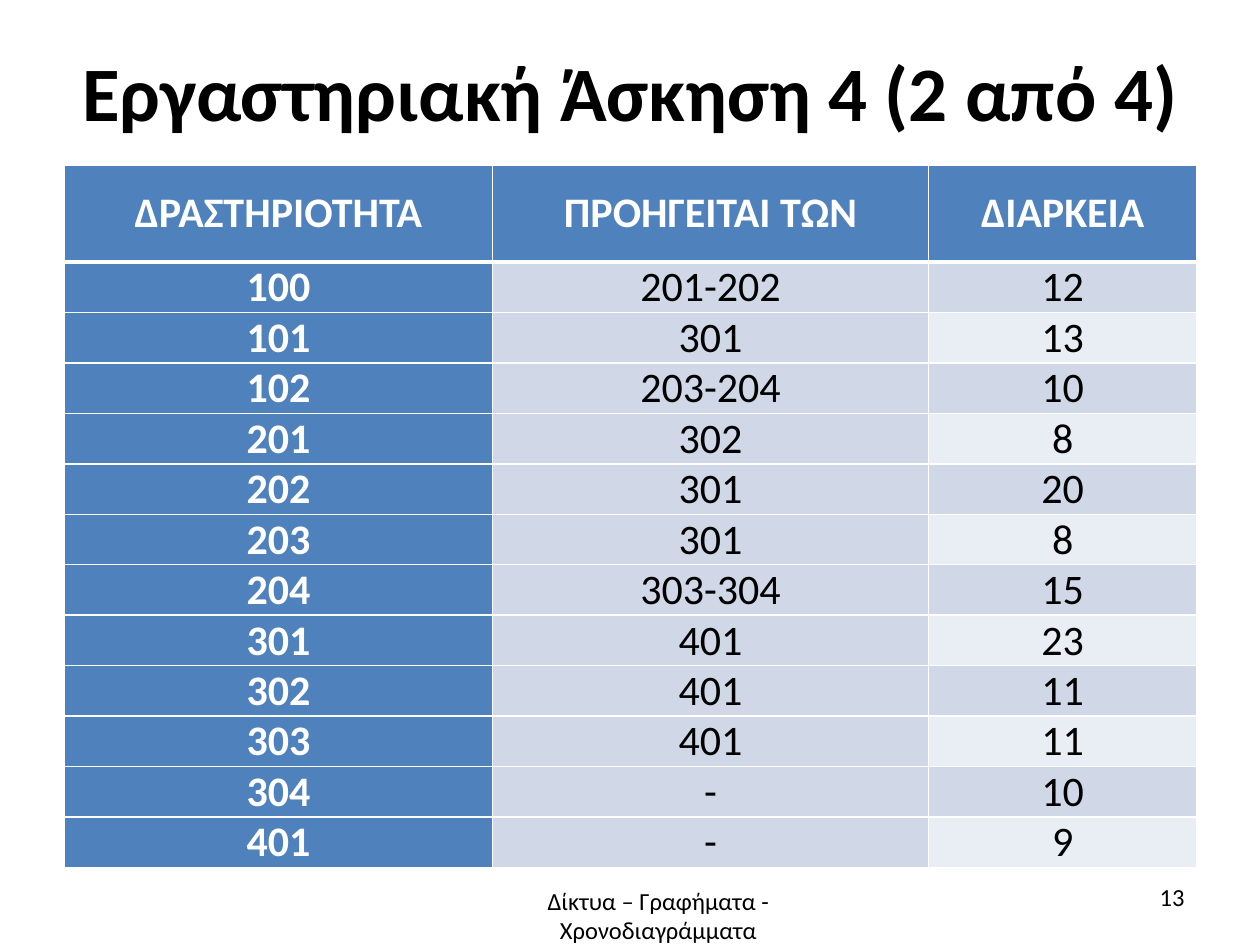
from lxml.etree import SubElement
from pptx import Presentation
from pptx.dml.color import RGBColor
from pptx.enum.text import MSO_ANCHOR, PP_ALIGN
from pptx.oxml.ns import qn
from pptx.util import Inches, Pt

BLACK = RGBColor(0x00, 0x00, 0x00)
WHITE = RGBColor(0xFF, 0xFF, 0xFF)
BLUE = RGBColor(0x4F, 0x81, 0xBD)
BAND_DARK = RGBColor(0xD0, 0xD8, 0xE8)
BAND_LIGHT = RGBColor(0xE9, 0xED, 0xF4)

HEADER = ("ΔΡΑΣΤΗΡΙΟΤΗΤΑ", "ΠΡΟΗΓΕΙΤΑΙ ΤΩΝ", "ΔΙΑΡΚΕΙΑ")
ACTIVITIES = [
    ("100", "201-202", "12"),
    ("101", "301", "13"),
    ("102", "203-204", "10"),
    ("201", "302", "8"),
    ("202", "301", "20"),
    ("203", "301", "8"),
    ("204", "303-304", "15"),
    ("301", "401", "23"),
    ("302", "401", "11"),
    ("303", "401", "11"),
    ("304", "-", "10"),
    ("401", "-", "9"),
]
COLUMN_WIDTHS = (3.4, 3.46, 2.13)
HEADER_HEIGHT = 0.77
ROW_HEIGHT = 0.4


def write(tf, text, size=14, bold=False, color=BLACK, align=PP_ALIGN.CENTER, font="Calibri"):
    p = tf.paragraphs[0]
    p.alignment = align
    r = p.add_run()
    r.text = text
    r.font.name = font
    r.font.size = Pt(size)
    r.font.bold = bold
    r.font.color.rgb = color


def set_borders(cell, bottom):
    tc_pr = cell._tc.get_or_add_tcPr()
    for side, width in (("L", 1), ("R", 1), ("T", 1), ("B", bottom)):
        ln = SubElement(tc_pr, qn(f"a:ln{side}"), w=str(Pt(width)))
        fill = SubElement(ln, qn("a:solidFill"))
        SubElement(fill, qn("a:srgbClr"), val=str(WHITE))


class SlideBuilder:
    def __init__(self, s):
        self.s = s
        self.table_size = 24

    def text(self, text, left, top, width, height, anchor=MSO_ANCHOR.TOP, **style):
        sp = self.s.shapes.add_textbox(Inches(left), Inches(top), Inches(width), Inches(height))
        tf = sp.text_frame
        tf.word_wrap = True
        tf.vertical_anchor = anchor
        write(tf, text, **style)

    def table(self, rows, left, top):
        heights = [HEADER_HEIGHT] + [ROW_HEIGHT] * (len(rows) - 1)
        table = self.s.shapes.add_table(
            len(rows), len(COLUMN_WIDTHS), Inches(left), Inches(top),
            Inches(sum(COLUMN_WIDTHS)), Inches(sum(heights)),
        ).table
        table.first_col = True
        for column, width in zip(table.columns, COLUMN_WIDTHS):
            column.width = Inches(width)
        for i, values in enumerate(rows):
            table.rows[i].height = Inches(heights[i])
            for j, value in enumerate(values):
                self.cell(table.cell(i, j), value, i, j)

    def cell(self, cell, value, i, j):
        heading = i == 0 or j == 0
        cell.margin_left = cell.margin_right = Inches(0.07)
        cell.margin_top = cell.margin_bottom = 0
        cell.vertical_anchor = MSO_ANCHOR.MIDDLE
        set_borders(cell, 3 if i == 0 else 1)
        cell.fill.solid()
        if heading:
            cell.fill.fore_color.rgb = BLUE
        else:
            cell.fill.fore_color.rgb = BAND_LIGHT if j == 2 and i % 2 == 0 else BAND_DARK
        write(cell.text_frame, value, size=self.table_size, bold=heading,
              color=WHITE if heading else BLACK)


def main():
    prs = Presentation()
    prs.slide_width = Inches(10)
    prs.slide_height = Inches(7.5)
    slide = SlideBuilder(prs.slides.add_slide(prs.slide_layouts[6]))
    slide.text("Εργαστηριακή Άσκηση 4 (2 από 4) ", 0.51, 0.05, 9.13, 1.34,
               anchor=MSO_ANCHOR.MIDDLE, size=44, bold=True)
    slide.table([HEADER] + ACTIVITIES, 0.51, 1.31)
    slide.text("Δίκτυα – Γραφήματα - Χρονοδιαγράμματα", 3.48, 6.98, 3.49, 0.55)
    slide.text("13", 7.17, 6.95, 2.33, 0.4, align=PP_ALIGN.RIGHT)
    prs.save("out.pptx")


if __name__ == "__main__":
    main()
